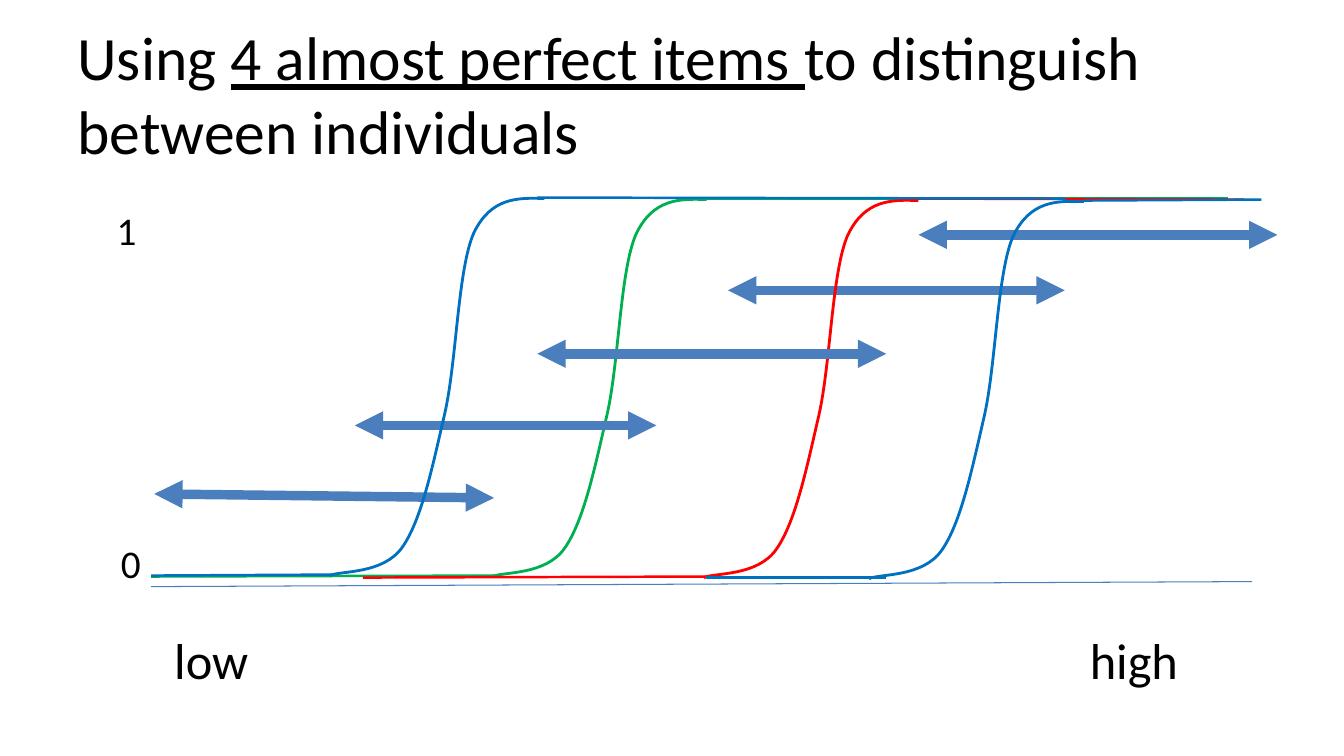
from dataclasses import dataclass

from lxml import etree
from pptx import Presentation
from pptx.dml.color import RGBColor
from pptx.enum.shapes import MSO_CONNECTOR
from pptx.enum.text import MSO_ANCHOR, MSO_AUTO_SIZE
from pptx.oxml.ns import qn
from pptx.shapes.autoshape import Shape
from pptx.shapes.shapetree import GroupShapes, SlideShapes
from pptx.util import Inches, Pt

STRAIGHT = MSO_CONNECTOR.STRAIGHT
MIDDLE = MSO_ANCHOR.MIDDLE
TOP = MSO_ANCHOR.TOP
FIXED_SIZE = MSO_AUTO_SIZE.NONE
GROW = MSO_AUTO_SIZE.SHAPE_TO_FIT_TEXT
FONT = "Calibri"
COLORS = {
    "text": "000000",
    "steel": "4B7EBC",
    "green": "00B050",
    "red": "FF0000",
    "blue": "0070C0",
}
Point = tuple[float, float]
Shapes = SlideShapes | GroupShapes

# Bezier points of one S-curve, measured from its top left corner:
# a start point, then two control points and an end point per segment.
S_CURVE: list[Point] = [
    (2.13, 0.01),
    (1.86, 0), (1.6, 0), (1.43, 0.35),
    (1.27, 0.71), (1.26, 1.63), (1.14, 2.15),
    (1.02, 2.67), (0.91, 3.2), (0.72, 3.47),
    (0.53, 3.74), (0.11, 3.7), (0, 3.75),
]


@dataclass
class Line:
    start: Point
    end: Point


@dataclass
class Item:
    """One item's response curve, with the ability ranges laid over it."""
    color: str
    corner: Point
    ceiling: Line
    floor: Line
    ranges: list[Line]
    grouped: bool


@dataclass
class Label:
    text: str
    left: float
    top: float
    width: float
    height: float
    size: int


ITEMS = [
    Item("green", (4.88, 1.97), Line((6.94, 1.97), (12.18, 1.97)),
         Line((1.5, 5.72), (4.9, 5.71)),
         [Line((7.22, 2.88), (10.56, 2.88)), Line((1.53, 4.9), (4.9, 4.94))], True),
    Item("red", (6.98, 1.98), Line((9.04, 1.97), (12.34, 1.98)),
         Line((3.6, 5.73), (7, 5.72)),
         [Line((3.52, 4.22), (6.51, 4.22)), Line((5.33, 3.51), (8.79, 3.51)),
          Line((9.11, 2.33), (12.67, 2.33))], True),
    Item("blue", (3.27, 1.96), Line((5.33, 1.96), (10.57, 1.97)),
         Line((1.5, 5.71), (3.29, 5.7)), [], False),
    Item("blue", (8.62, 1.99), Line((10.75, 1.99), (12.51, 1.98)),
         Line((7, 5.73), (8.79, 5.73)), [], False),
]
ABILITY_AXIS = Line((1.5, 5.82), (12.42, 5.77))
LABELS = [
    Label("low", 1.63, 6.19, 0.94, 0.71, 36),
    Label("high", 10.71, 6.19, 1.09, 0.71, 36),
    Label("0", 1.1, 5.3, 0.4, 0.57, 28),
    Label("1", 1.06, 2, 0.4, 0.57, 28),
]
TITLE_BOX = Label("", 0.67, 0.3, 12.46, 1.25, 44)
TITLE_RUNS = [
    ("Using ", False),
    ("4 almost perfect items ", True),
    ("to distinguish between individuals", False),
]


def rgb(name: str) -> RGBColor:
    return RGBColor.from_string(COLORS[name])


def add_label(shapes: Shapes, label: Label, runs: list[tuple[str, bool]],
              wrap: bool = False) -> None:
    """Add a text box of (text, underlined) runs; wrapped text is centred vertically."""
    box = shapes.add_textbox(Inches(label.left), Inches(label.top),
                             Inches(label.width), Inches(label.height))
    frame = box.text_frame
    frame.word_wrap = wrap
    frame.auto_size = FIXED_SIZE if wrap else GROW
    frame.vertical_anchor = MIDDLE if wrap else TOP
    paragraph = frame.paragraphs[0]
    for text, underlined in runs:
        run = paragraph.add_run()
        run.text = text
        run.font.name = FONT
        run.font.size = Pt(label.size)
        run.font.color.rgb = rgb("text")
        if underlined:
            run.font.underline = True


def add_line(shapes: Shapes, line: Line, color: str, width: float,
             arrows: bool = False) -> None:
    connector = shapes.add_connector(
        STRAIGHT, *(Inches(value) for value in line.start + line.end))
    connector.line.color.rgb = rgb(color)
    connector.line.width = Pt(width)
    if arrows:
        outline = connector.line._get_or_add_ln()
        for end in ("a:headEnd", "a:tailEnd"):
            etree.SubElement(outline, qn(end), type="triangle")
    etree.SubElement(connector._element.spPr, qn("a:effectLst"))


def bend_segments(shape: Shape) -> None:
    """Turn every three straight segments of a freeform into one Bezier segment."""
    straight = list(shape._element.iter(qn("a:lnTo")))
    for first in range(0, len(straight), 3):
        curve = etree.Element(qn("a:cubicBezTo"))
        straight[first].addprevious(curve)
        for segment in straight[first:first + 3]:
            curve.append(segment[0])
            segment.getparent().remove(segment)


def add_s_curve(shapes: Shapes, corner: Point, color: str) -> None:
    vertices = [(Inches(corner[0] + x), Inches(corner[1] + y)) for x, y in S_CURVE]
    builder = shapes.build_freeform(*vertices[0])
    builder.add_line_segments(vertices[1:], close=False)
    shape = builder.convert_to_shape()
    bend_segments(shape)
    shape.shadow.inherit = False
    shape.fill.background()
    shape.line.color.rgb = rgb(color)
    shape.line.width = Pt(2)


def add_item(shapes: SlideShapes, item: Item) -> None:
    curve_shapes = shapes.add_group_shape().shapes if item.grouped else shapes
    add_s_curve(curve_shapes, item.corner, item.color)
    for plateau in (item.ceiling, item.floor):
        add_line(curve_shapes, plateau, item.color, 1.75)
    for ability_range in item.ranges:
        add_line(shapes, ability_range, "steel", 6.75, arrows=True)


def main() -> None:
    presentation = Presentation()
    presentation.slide_width = Inches(13.33)
    presentation.slide_height = Inches(7.5)
    slide = presentation.slides.add_slide(presentation.slide_layouts[6])
    add_label(slide.shapes, TITLE_BOX, TITLE_RUNS, wrap=True)
    add_line(slide.shapes, ABILITY_AXIS, "steel", 0.75)
    for item in ITEMS:
        add_item(slide.shapes, item)
    for label in LABELS:
        add_label(slide.shapes, label, [(label.text, False)])
    presentation.save("out.pptx")


if __name__ == "__main__":
    main()
